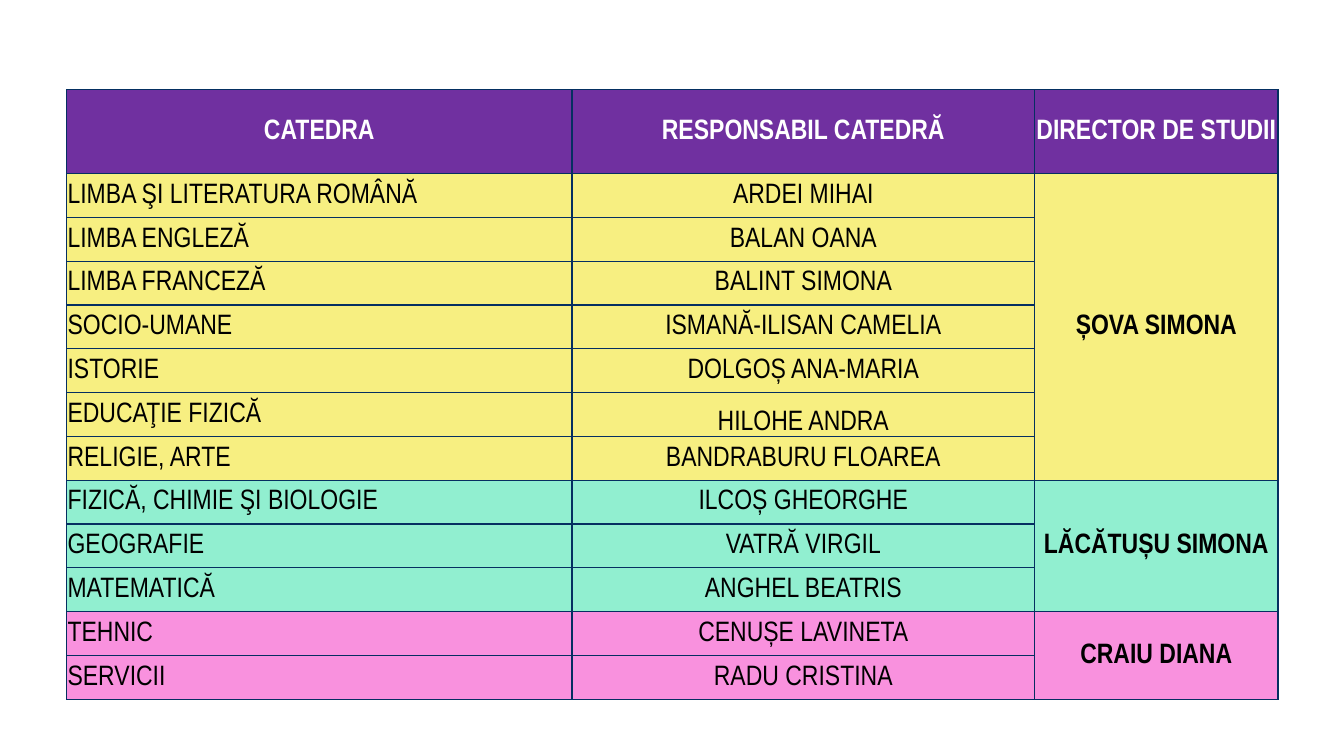
"""Build the slide that lists departments, their heads and the directors of studies."""
from lxml import etree
from pptx import Presentation
from pptx.dml.color import RGBColor
from pptx.enum.text import MSO_ANCHOR as Anchor, PP_ALIGN as Align
from pptx.oxml import parse_xml
from pptx.util import Pt

WHITE = RGBColor(0xFF, 0xFF, 0xFF)
BLACK = RGBColor(0x00, 0x00, 0x00)
NAVY = RGBColor(0x05, 0x2F, 0x61)
PURPLE = RGBColor(0x70, 0x30, 0xA0)
YELLOW = RGBColor(0xF7, 0xEF, 0x81)
MINT = RGBColor(0x91, 0xEF, 0xD0)
PINK = RGBColor(0xF9, 0x91, 0xDE)
NS = "http://schemas.openxmlformats.org/drawingml/2006/main"

HEADS = ["CATEDRA", "RESPONSABIL CATEDRĂ", "DIRECTOR DE STUDII"]
GROUPS = [
    ("ȘOVA SIMONA", YELLOW, [
        ("LIMBA ŞI LITERATURA ROMÂNĂ", "ARDEI MIHAI"),
        ("LIMBA ENGLEZĂ", "BALAN OANA"),
        ("LIMBA FRANCEZĂ", "BALINT SIMONA"),
        ("SOCIO-UMANE", "ISMANĂ-ILISAN CAMELIA"),
        ("ISTORIE", "DOLGOȘ ANA-MARIA"),
        ("EDUCAŢIE FIZICĂ", "HILOHE ANDRA"),
        ("RELIGIE, ARTE", "BANDRABURU FLOAREA"),
    ]),
    ("LĂCĂTUȘU SIMONA", MINT, [
        ("FIZICĂ, CHIMIE ŞI BIOLOGIE", "ILCOȘ GHEORGHE"),
        ("GEOGRAFIE", "VATRĂ VIRGIL"),
        ("MATEMATICĂ", "ANGHEL BEATRIS"),
    ]),
    ("CRAIU DIANA", PINK, [
        ("TEHNIC", "CENUȘE LAVINETA"),
        ("SERVICII", "RADU CRISTINA"),
    ]),
]
WIDTHS = [361, 330.5, 173.8]
HEIGHTS = [60] + [31.32] * sum(len(rows) for _, _, rows in GROUPS)


class Board:
    """Hold the text style and the current slide."""

    def __init__(self, slide, font, size):
        self.slide, self.font, self.size = slide, font, size

    def table(self, left, top, widths, heights):
        frame = self.slide.shapes.add_table(
            len(heights), len(widths), Pt(left), Pt(top),
            Pt(sum(widths)), Pt(sum(heights)))
        grid = frame.table
        for col, width in zip(grid.columns, widths):
            col.width = Pt(width)
        for row, height in zip(grid.rows, heights):
            row.height = Pt(height)
        return grid

    def cell(self, cell, text, fill, color=BLACK, bold=False, align=Align.CENTER):
        cell.fill.solid()
        cell.fill.fore_color.rgb = fill
        cell.margin_left = cell.margin_right = cell.margin_top = Pt(0.7)
        cell.margin_bottom = Pt(0)
        cell.vertical_anchor = Anchor.MIDDLE
        self.border(cell)
        cell.text = text
        para = cell.text_frame.paragraphs[0]
        para.alignment = align
        font = para.font
        font.name, font.size, font.bold = self.font, Pt(self.size), bold
        font.color.rgb = color

    def border(self, cell):
        props = cell._tc.get_or_add_tcPr()
        for spot, side in enumerate("LRTB"):
            line = parse_xml(f'<a:ln{side} xmlns:a="{NS}" w="{Pt(1)}"/>')
            fill = etree.SubElement(line, f"{{{NS}}}solidFill")
            etree.SubElement(fill, f"{{{NS}}}srgbClr", val=str(NAVY))
            props.insert(spot, line)


def main():
    deck = Presentation()
    deck.slide_width, deck.slide_height = Pt(960), Pt(540)
    board = Board(deck.slides.add_slide(deck.slide_layouts[6]), "Arial Narrow", 20)
    grid = board.table(47.6, 64, WIDTHS, HEIGHTS)
    for col, head in enumerate(HEADS):
        board.cell(grid.cell(0, col), head, PURPLE, WHITE, True)
    first = 1
    for chief, fill, rows in GROUPS:
        last = first + len(rows) - 1
        for row, (dept, lead) in enumerate(rows, first):
            board.cell(grid.cell(row, 0), dept, fill, align=Align.LEFT)
            board.cell(grid.cell(row, 1), lead, fill)
            board.cell(grid.cell(row, 2), chief if row == first else "", fill, bold=True)
        grid.cell(first, 2).merge(grid.cell(last, 2))
        first = last + 1
    grid.cell(6, 1).vertical_anchor = Anchor.BOTTOM
    deck.save("out.pptx")


if __name__ == "__main__":
    main()
